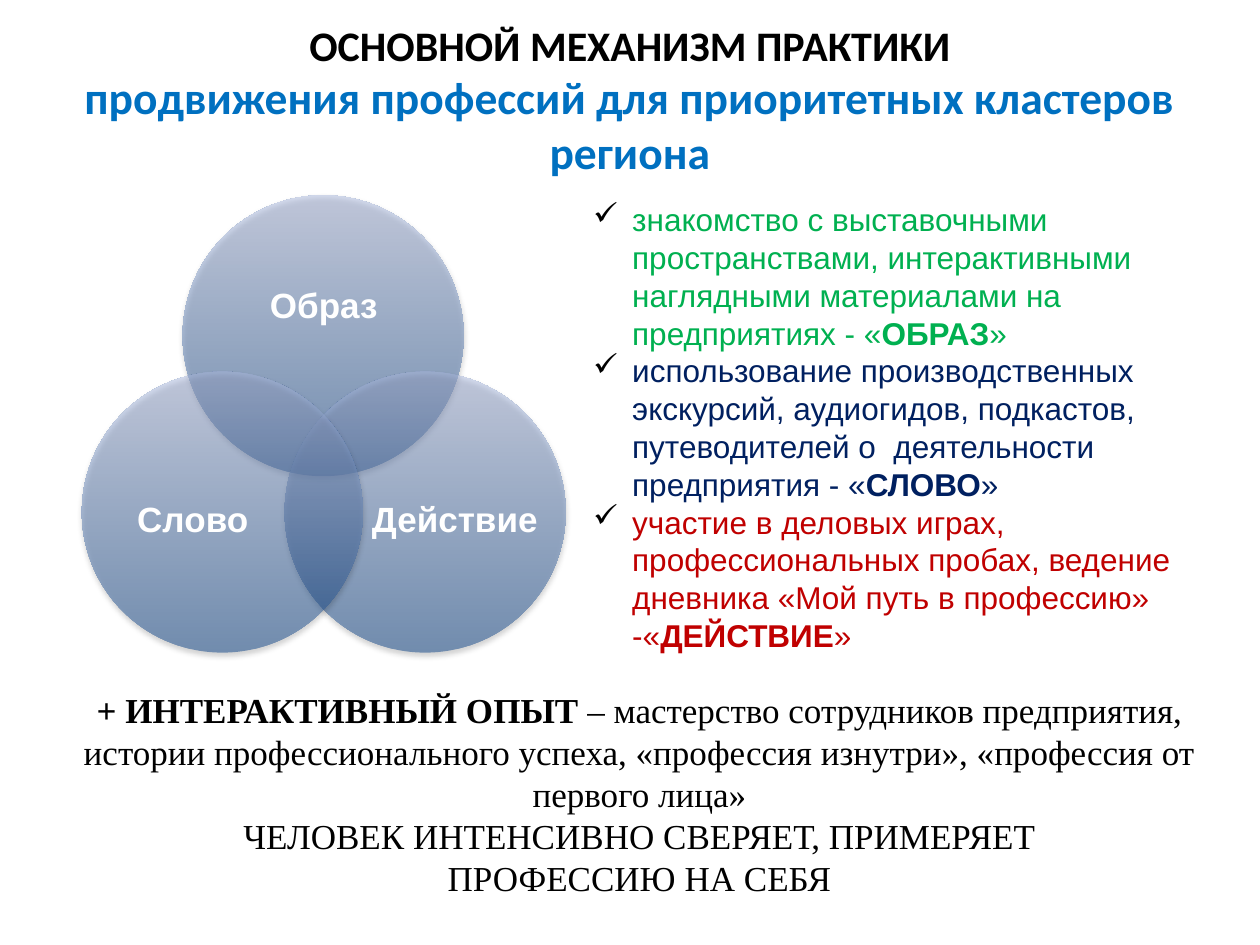
from lxml.etree import SubElement
from pptx import Presentation
from pptx.dml.color import RGBColor
from pptx.enum.shapes import MSO_SHAPE
from pptx.enum.text import MSO_ANCHOR, MSO_AUTO_SIZE, PP_ALIGN
from pptx.oxml.ns import qn
from pptx.util import Inches, Pt

BLACK = RGBColor(0x00, 0x00, 0x00)
WHITE = RGBColor(0xFF, 0xFF, 0xFF)
BLUE = RGBColor(0x00, 0x70, 0xC0)
GREEN = RGBColor(0x00, 0xB0, 0x50)
NAVY = RGBColor(0x00, 0x20, 0x60)
RED = RGBColor(0xC0, 0x00, 0x00)
CIRCLE_DARK = RGBColor(0x11, 0x47, 0x8B)
CIRCLE_LIGHT = RGBColor(0xAB, 0xB9, 0xDE)

DIAMETER = 2.23
CIRCLES = [
    ("Образ", (0.8, 0), (1.1, 0.39, 1.64, 1)),
    ("Действие", (1.61, 1.4), (2.29, 1.97, 1.34, 1.23)),
    ("Слово", (0, 1.4), (0.21, 1.97, 1.34, 1.23)),
]
STEPS = [
    ("знакомство с выставочными пространствами, интерактивными наглядными "
     "материалами на предприятиях - «", "ОБРАЗ", GREEN),
    ("использование производственных экскурсий, аудиогидов, подкастов, "
     "путеводителей о  деятельности предприятия - «", "СЛОВО", NAVY),
    ("участие в деловых играх, профессиональных пробах, ведение дневника "
     "«Мой путь в профессию» -«", "ДЕЙСТВИЕ", RED),
]
CONCLUSION = [
    [("+ ИНТЕРАКТИВНЫЙ ОПЫТ ", True),
     ("– мастерство сотрудников предприятия, истории профессионального успеха, "
      "«профессия изнутри», «профессия от первого лица»", False)],
    [("ЧЕЛОВЕК ИНТЕНСИВНО СВЕРЯЕТ, ПРИМЕРЯЕТ", False)],
    [("ПРОФЕССИЮ НА СЕБЯ", False)],
]


def add_span(paragraph, text, font, size, color, bold=False):
    span = paragraph.add_run()
    span.text = text
    span.font.name = font
    span.font.size = Pt(size)
    span.font.color.rgb = color
    span.font.bold = bold


def add_text_box(shapes, left, top, width, height, anchor=MSO_ANCHOR.TOP):
    box = shapes.add_textbox(Inches(left), Inches(top), Inches(width), Inches(height))
    box.text_frame.word_wrap = True
    box.text_frame.vertical_anchor = anchor
    return box.text_frame


def paragraphs_for(frame, items):
    for index, item in enumerate(items):
        yield frame.add_paragraph() if index else frame.paragraphs[0], item


def place_title(page, left, top, width, height):
    title = page.shapes.title
    title.left, title.top = Inches(left), Inches(top)
    title.width, title.height = Inches(width), Inches(height)
    frame = title.text_frame
    frame.auto_size = MSO_AUTO_SIZE.NONE
    frame.vertical_anchor = MSO_ANCHOR.MIDDLE
    frame.margin_bottom = Inches(0.45)
    paragraph = frame.paragraphs[0]
    paragraph.alignment = PP_ALIGN.CENTER
    add_span(paragraph, "ОСНОВНОЙ МЕХАНИЗМ ПРАКТИКИ", "Calibri", 24, BLACK, True)
    paragraph.add_line_break()
    add_span(paragraph, "продвижения профессий для приоритетных кластеров региона",
             "Calibri", 26, BLUE, True)


def style_circle(circle):
    circle.line.fill.background()
    circle.fill.gradient()
    circle.fill.gradient_angle = 90
    colors = (CIRCLE_DARK, CIRCLE_LIGHT)
    for stop, color, position in zip(circle.fill.gradient_stops, colors, (0, 1)):
        stop.color.rgb = color
        stop.position = position
    properties = circle._element.spPr
    for color in properties.iter(qn("a:srgbClr")):
        SubElement(color, qn("a:alpha"), val="50000")
    circle.shadow.inherit = False
    shadow = SubElement(properties.find(qn("a:effectLst")), qn("a:outerShdw"),
                        blurRad=str(Pt(3.1)), dist=str(Pt(1.8)), dir="5400000",
                        rotWithShape="0")
    color = SubElement(shadow, qn("a:srgbClr"), val=str(BLACK))
    SubElement(color, qn("a:alpha"), val="35000")


def place_venn(page, left, top):
    shapes = page.shapes.add_group_shape().shapes
    for name, (x, y), (label_x, label_y, width, height) in CIRCLES:
        circle = shapes.add_shape(MSO_SHAPE.OVAL, Inches(left + x), Inches(top + y),
                                  Inches(DIAMETER), Inches(DIAMETER))
        style_circle(circle)
        frame = add_text_box(shapes, left + label_x, top + label_y, width, height,
                             MSO_ANCHOR.MIDDLE)
        frame.margin_left = frame.margin_right = 0
        frame.margin_top = frame.margin_bottom = 0
        paragraph = frame.paragraphs[0]
        paragraph.alignment = PP_ALIGN.CENTER
        paragraph.line_spacing = 0.9
        add_span(paragraph, name, "Arial", 20, WHITE, True)


def add_check_mark(paragraph):
    properties = paragraph._p.get_or_add_pPr()
    properties.set("marL", str(Inches(0.31)))
    properties.set("indent", str(Inches(-0.31)))
    color = SubElement(properties, qn("a:buClr"))
    SubElement(color, qn("a:srgbClr"), val=str(BLACK))
    SubElement(properties, qn("a:buChar"), char="✓")


def place_steps(page, left, top, width, height):
    frame = add_text_box(page.shapes, left, top, width, height)
    for paragraph, (text, keyword, color) in paragraphs_for(frame, STEPS):
        add_check_mark(paragraph)
        for part, bold in ((text, False), (keyword, True), ("»", False)):
            add_span(paragraph, part, "Arial", 18, color, bold)


def place_conclusion(page, left, top, width, height):
    frame = add_text_box(page.shapes, left, top, width, height, MSO_ANCHOR.MIDDLE)
    for paragraph, parts in paragraphs_for(frame, CONCLUSION):
        paragraph.alignment = PP_ALIGN.CENTER
        for part, bold in parts:
            add_span(paragraph, part, "Times New Roman", 20, BLACK, bold)


def main():
    deck = Presentation()
    deck.slide_width, deck.slide_height = Inches(10), Inches(7.5)
    page = deck.slides.add_slide(deck.slide_layouts[5])
    place_title(page, 0.28, 0.36, 9.44, 1.25)
    place_venn(page, 0.65, 1.55)
    place_steps(page, 4.61, 1.54, 5.06, 3.74)
    place_conclusion(page, 0.48, 5.41, 9.19, 1.78)
    deck.save("out.pptx")


if __name__ == "__main__":
    main()
